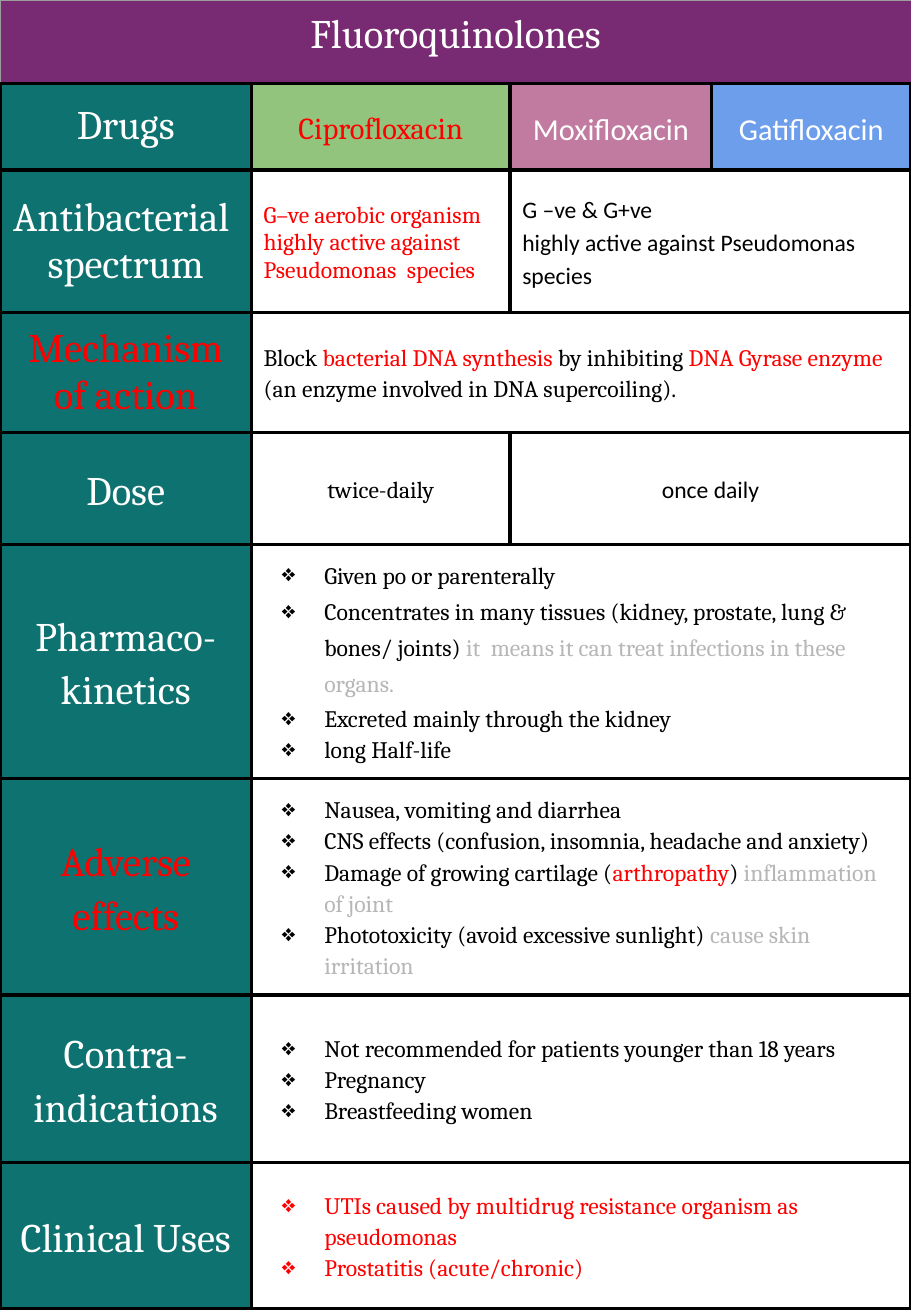
import dataclasses

import lxml.etree
import pptx
import pptx.dml.color
import pptx.enum.text
import pptx.oxml.ns
import pptx.util

Inches = pptx.util.Inches
Pt = pptx.util.Pt
Align = pptx.enum.text.PP_ALIGN
Anchor = pptx.enum.text.MSO_ANCHOR


@dataclasses.dataclass(frozen=True)
class Theme:
    purple: str = "782A72"
    teal: str = "0E7270"
    green: str = "93C47D"
    pink: str = "C27BA0"
    blue: str = "6D9EEB"
    white: str = "FFFFFF"
    black: str = "000000"
    red: str = "FF0000"
    note: str = "B7B7B7"
    edge: str = "9E9E9E"
    serif: str = "Cambria"
    sans: str = "Calibri"
    heading: int = 24
    drug: int = 18
    body: int = 14


THEME = Theme()
COLUMN_WIDTHS = [2.07, 2.13, 1.66, 1.64]
ROW_HEIGHTS = [0.69, 0.71, 1.17, 0.99, 0.92, 1.93, 1.78, 1.38, 1.2]
BULLET = "❖"

LABELS = [
    (["Drugs"], THEME.white, 1.15),
    (["Antibacterial  spectrum"], THEME.white, 1.01),
    (["Mechanism of action"], THEME.red, 1.01),
    (["Dose"], THEME.white, 1.15),
    (["Pharmaco-", "kinetics"], THEME.white, 1.15),
    (["Adverse effects"], THEME.red, 1.15),
    (["Contra-", "indications"], THEME.white, 1.15),
    (["Clinical Uses"], THEME.white, 1.15),
]
DRUGS = [
    ("Ciprofloxacin", THEME.green, THEME.red, THEME.serif),
    ("Moxifloxacin", THEME.pink, THEME.white, THEME.sans),
    ("Gatifloxacin", THEME.blue, THEME.white, THEME.sans),
]
MECHANISM = [
    [("Block ", THEME.black), ("bacterial DNA synthesis", THEME.red),
     (" by inhibiting ", THEME.black), ("DNA Gyrase enzyme", THEME.red)],
    "(an enzyme involved in DNA supercoiling).",
]
PHARMACOKINETICS = [
    "Given po or parenterally",
    [("Concentrates in many tissues (kidney, prostate, lung & bones/ joints) ", THEME.black),
     ("it  means it can treat infections in these organs.", THEME.note)],
    "Excreted mainly through the kidney",
    "long Half-life",
]
ADVERSE_EFFECTS = [
    "Nausea, vomiting and diarrhea",
    "CNS effects (confusion, insomnia, headache and anxiety)",
    [("Damage of growing cartilage (", THEME.black), ("arthropathy", THEME.red),
     (") ", THEME.black), ("inflammation of joint", THEME.note)],
    [("Phototoxicity (avoid excessive sunlight) ", THEME.black),
     ("cause skin irritation", THEME.note)],
]
CONTRAINDICATIONS = [
    "Not recommended for patients younger than 18 years",
    "Pregnancy",
    "Breastfeeding women",
]
CLINICAL_USES = [
    "UTIs caused by multidrug resistance organism as pseudomonas",
    "Prostatitis (acute/chronic)",
]


def apply_format(target, values):
    for name, value in values.items():
        setattr(target, name, value)


def rgb(color):
    return pptx.dml.color.RGBColor.from_string(color)


def add_element(parent, tag, **attributes):
    return lxml.etree.SubElement(parent, pptx.oxml.ns.qn(tag), attributes)


def set_borders(cell, outer_color, outer_width):
    properties = cell._tc.get_or_add_tcPr()
    for position, side in enumerate(["a:lnL", "a:lnR", "a:lnT", "a:lnB"]):
        bottom = side == "a:lnB"
        color = THEME.black if bottom else outer_color
        width = 2.25 if bottom else outer_width
        line = add_element(properties, side, w=str(Pt(width)))
        add_element(add_element(line, "a:solidFill"), "a:srgbClr", val=color)
        properties.insert(position, line)


def add_bullet(paragraph, color):
    properties = paragraph._p.get_or_add_pPr()
    properties.set("marL", str(Inches(0.5)))
    properties.set("indent", str(Inches(-0.35)))
    add_element(add_element(properties, "a:buClr"), "a:srgbClr", val=color)
    add_element(properties, "a:buChar", char=BULLET)


def write_paragraph(paragraph, content, font, size, color, align, spacing):
    apply_format(paragraph, {"alignment": align, "line_spacing": spacing})
    runs = [(content, color)] if isinstance(content, str) else content
    for text, run_color in runs:
        run = paragraph.add_run()
        run.text = text
        apply_format(run.font, {"name": font, "size": Pt(size)})
        run.font.color.rgb = rgb(run_color)


def fill_cell(cell, contents, font=THEME.serif, size=THEME.body, color=THEME.black,
              align=Align.LEFT, spacings=None, bullets=False, anchor=Anchor.MIDDLE, fill=None):
    margins = ["margin_left", "margin_right", "margin_top", "margin_bottom"]
    apply_format(cell, {"vertical_anchor": anchor, **dict.fromkeys(margins, Inches(0.1))})
    if fill:
        cell.fill.solid()
        cell.fill.fore_color.rgb = rgb(fill)
    spacings = spacings or [1.15] * len(contents)
    frame = cell.text_frame
    for index, (content, spacing) in enumerate(zip(contents, spacings)):
        paragraph = frame.add_paragraph() if index else frame.paragraphs[0]
        write_paragraph(paragraph, content, font, size, color, align, spacing)
        if bullets:
            add_bullet(paragraph, color)


def merge_cells(table, row, first, last):
    cell = table.cell(row, first)
    cell.merge(table.cell(row, last))
    return cell


def add_grid(slide):
    table = slide.shapes.add_table(
        len(ROW_HEIGHTS), len(COLUMN_WIDTHS), Inches(0), Inches(0),
        Inches(sum(COLUMN_WIDTHS)), Inches(sum(ROW_HEIGHTS))).table
    apply_format(table, {"first_row": False, "horz_banding": False})
    for column, width in zip(table.columns, COLUMN_WIDTHS):
        column.width = Inches(width)
    for index, (row, height) in enumerate(zip(table.rows, ROW_HEIGHTS)):
        row.height = Inches(height)
        outer = (THEME.black, 2.25) if index else (THEME.edge, 0.5)
        for cell in row.cells:
            cell.fill.background()
            set_borders(cell, *outer)
    return table


def write_headings(table):
    heading = {"size": THEME.heading, "align": Align.CENTER}
    fill_cell(merge_cells(table, 0, 0, 3), ["Fluoroquinolones"], color=THEME.white,
              fill=THEME.purple, anchor=Anchor.TOP, spacings=[1.0], **heading)
    for row, (lines, color, spacing) in enumerate(LABELS, start=1):
        fill_cell(table.cell(row, 0), lines, color=color, fill=THEME.teal,
                  spacings=[spacing] * len(lines),
                  anchor=Anchor.TOP if row == 1 else Anchor.MIDDLE, **heading)
    for column, (name, fill, color, font) in enumerate(DRUGS, start=1):
        fill_cell(table.cell(1, column), [name], font=font, size=THEME.drug,
                  color=color, align=Align.CENTER, fill=fill)


def write_details(table):
    fill_cell(table.cell(2, 1),
              ["G–ve aerobic organism", "highly active against  Pseudomonas  species"],
              color=THEME.red, spacings=[1.15, 1.01])
    fill_cell(merge_cells(table, 2, 2, 3),
              ["G –ve & G+ve", "highly active against Pseudomonas species"], font=THEME.sans)
    fill_cell(merge_cells(table, 3, 1, 3), MECHANISM)
    fill_cell(table.cell(4, 1), ["twice-daily"], align=Align.CENTER)
    fill_cell(merge_cells(table, 4, 2, 3), ["once daily"], font=THEME.sans, align=Align.CENTER)
    lists = [
        (PHARMACOKINETICS, THEME.black, [1.15, 1.33, 1.28, 1.15]),
        (ADVERSE_EFFECTS, THEME.black, None),
        (CONTRAINDICATIONS, THEME.black, None),
        (CLINICAL_USES, THEME.red, None),
    ]
    for row, (items, color, spacings) in enumerate(lists, start=5):
        fill_cell(merge_cells(table, row, 1, 3), items, color=color,
                  spacings=spacings, bullets=True)


def main():
    presentation = pptx.Presentation()
    apply_format(presentation, {"slide_width": Inches(7.5), "slide_height": Inches(10.83)})
    slide = presentation.slides.add_slide(presentation.slide_layouts[6])
    table = add_grid(slide)
    write_headings(table)
    write_details(table)
    presentation.save("out.pptx")


if __name__ == "__main__":
    main()
